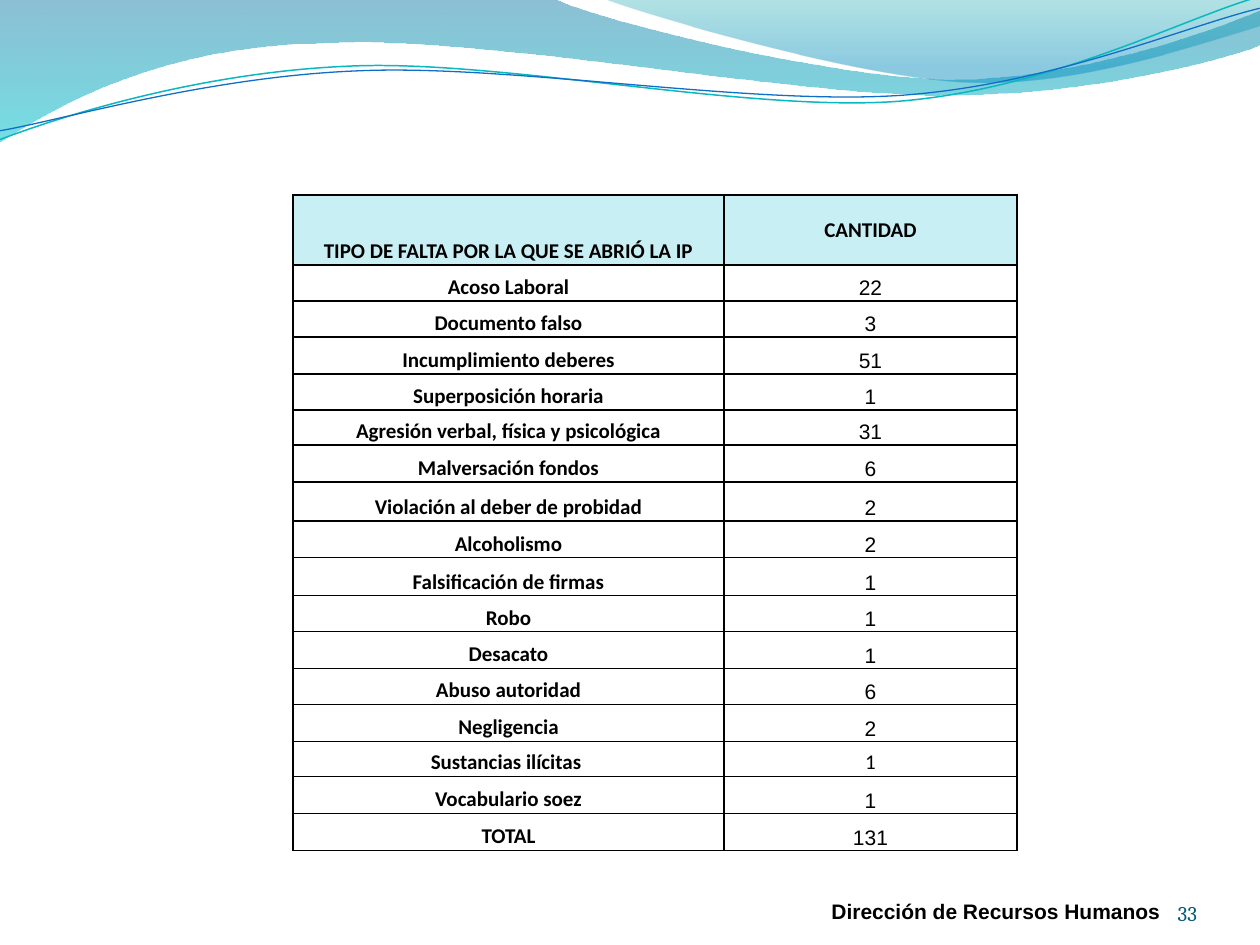
from lxml.etree import SubElement
from pptx import Presentation
from pptx.dml.color import RGBColor
from pptx.enum.text import MSO_ANCHOR, PP_ALIGN
from pptx.oxml.ns import qn
from pptx.util import Emu, Pt

SCALE = 914400 / 126
COLORS = {
    "ink": "000000", "head": "C8EFF4", "page": "045D75",
    "teal": "0AB8BF", "blue": "0F6FC6",
    "deep": "0074A1", "aqua": "00C6CF", "sea": "00A1A9", "sky": "008BBF",
}
FAULTS = [
    ("Acoso Laboral", 22), ("Documento falso", 3),
    ("Incumplimiento deberes", 51), ("Superposición horaria", 1),
    ("Agresión verbal, física y psicológica", 31), ("Malversación fondos", 6),
    ("Violación al deber de probidad", 2), ("Alcoholismo", 2),
    ("Falsificación de firmas", 1), ("Robo", 1), ("Desacato", 1),
    ("Abuso autoridad", 6), ("Negligencia", 2), ("Sustancias ilícitas ", 1),
    ("Vocabulario soez", 1), ("TOTAL", 131),
]
HEIGHTS = {0: 70, 1: 36, 2: 36, 4: 36, 5: 35, 7: 39, 9: 38, 10: 36, 12: 36,
           14: 35}
WAVES = [
    ([(0, 0), (554, -1), (600, 21, 837, 79, 955, 79),
      (1075, 79, 1207, 33, 1260, 11), (1261, 45),
      (1239, 55, 1096, 96, 940, 95), (784, 95, 481, 35, 324, 43),
      (163, 45, 58, 105, -1, 142), (0, 0)],
     [("deep", 0, 45), ("aqua", 1, 55)]),
    ([(604, -1), (641, 14, 859, 78, 969, 82),
      (1079, 87, 1211, 40, 1260, 26), (1260, 0), (604, -1)],
     [("sea", 0, 30), ("sky", 0.8, 45)]),
]
LINES = [
    ([(-3, 110), (58, 90, 199, 52, 350, 53), (499, 53, 745, 118, 896, 114),
      (1049, 109, 1184, 45, 1260, 27)], "teal", 0.85),
    ([(-2, 101), (57, 94, 207, 57, 357, 58), (509, 58, 750, 112, 902, 108),
      (1052, 104, 1188, 52, 1262, 38)], "blue", 0.75),
]


def px(size):
    """Turn px into EMU."""
    return Emu(round(size * SCALE))


def color(name):
    """Look up a colour by name."""
    return RGBColor.from_string(COLORS[name])


def add_path(slide, steps, close):
    """Draw a freeform whose six-number steps are cubic curves."""
    ends = [(px(step[-2]), px(step[-1])) for step in steps]
    pen = slide.shapes.build_freeform(*ends[0])
    pen.add_line_segments(ends[1:], close=close)
    shape = pen.convert_to_shape()
    shape.shadow.inherit = False
    tags = list(shape.element.spPr.iter(qn("a:lnTo")))
    for tag, step in zip(tags, steps[1:]):
        if len(step) == 6:
            curve = SubElement(tag.getparent(), qn("a:cubicBezTo"))
            for x, y in zip(step[::2], step[1::2]):
                SubElement(curve, qn("a:pt"), x=str(px(x) - shape.left),
                           y=str(px(y) - shape.top))
            tag.getparent().replace(tag, curve)
    return shape


def add_wave(slide, steps, stops):
    """Draw a closed wave with a see-through gradient from top to bottom."""
    shape = add_path(slide, steps, True)
    shape.line.fill.background()
    shape.fill.gradient()
    shape.fill.gradient_angle = 270
    for stop, (name, place, _) in zip(shape.fill.gradient_stops, stops):
        stop.color.rgb = color(name)
        stop.position = place
    tags = shape.element.spPr.iter(qn("a:srgbClr"))
    for tag, (_, _, alpha) in zip(list(tags), stops):
        SubElement(tag, qn("a:alpha"), val=str(alpha * 1000))


def add_line(slide, steps, name, width):
    """Draw an open curved line, slightly turned."""
    shape = add_path(slide, steps, False)
    shape.rotation = 357.3
    shape.fill.background()
    shape.line.color.rgb = color(name)
    shape.line.width = Pt(width)


def write(frame, text, align, face, bold=False, name="ink", gap=None):
    """Write one formatted paragraph into a text frame."""
    par = frame.paragraphs[0]
    par.alignment = align
    par.line_spacing = gap
    run = par.add_run()
    run.text = text
    for key, value in {"size": Pt(12), "name": face, "bold": bold}.items():
        setattr(run.font, key, value)
    run.font.color.rgb = color(name)


def add_text(slide, box, text, style, form):
    """Add a text box with the given frame format."""
    frame = slide.shapes.add_textbox(*map(px, box)).text_frame
    for key, value in {"word_wrap": True, **form}.items():
        setattr(frame, key, value)
    write(frame, text, **style)


def add_edges(cell):
    """Put a thin dark border on each side of a cell."""
    props = cell._tc.get_or_add_tcPr()
    for side in "LRTB":
        edge = SubElement(props, qn(f"a:ln{side}"), w=str(Pt(1)))
        fill = SubElement(edge, qn("a:solidFill"))
        SubElement(fill, qn("a:srgbClr"), val=COLORS["ink"])


def fill_cell(cell, text, face, bold, gap, head, anchor):
    """Format one table cell and write its text."""
    add_edges(cell)
    if head:
        cell.fill.solid()
        cell.fill.fore_color.rgb = color("head")
    else:
        cell.fill.background()
    for side in ("left", "right", "top", "bottom"):
        setattr(cell, f"margin_{side}", px(1))
    cell.vertical_anchor = anchor
    write(cell.text_frame, text, PP_ALIGN.CENTER, face, bold, gap=gap)


def add_faults(slide):
    """Add the table of faults and their counts."""
    rows = [("TIPO DE FALTA POR LA QUE SE ABRIÓ LA IP", "CANTIDAD"), *FAULTS]
    sizes = [HEIGHTS.get(i, 37) for i in range(len(rows))]
    box = map(px, (293, 195, 724, sum(sizes)))
    table = slide.shapes.add_table(len(rows), 2, *box).table
    table.first_row = table.horz_banding = False
    for col, width in zip(table.columns, (431, 293)):
        col.width = px(width)
    for i, (label, count) in enumerate(rows):
        table.rows[i].height = px(sizes[i])
        head = i == 0
        low, mid = MSO_ANCHOR.BOTTOM, MSO_ANCHOR.MIDDLE
        fill_cell(table.cell(i, 0), label, "Calibri", True, 1.05, head, low)
        plain = head or label.startswith("Sustancias")
        fill_cell(table.cell(i, 1), str(count), "Calibri" if plain else "Arial",
                  head, 1.05 if head else 1.07, head, mid if head else low)


def main():
    """Build the slide and save it."""
    deck = Presentation()
    deck.slide_width, deck.slide_height = px(1260), px(945)
    slide = deck.slides.add_slide(deck.slide_layouts[6])
    for wave in WAVES:
        add_wave(slide, *wave)
    for line in LINES:
        add_line(slide, *line)
    flat = {f"margin_{s}": 0 for s in ("left", "right", "top", "bottom")}
    add_text(slide, (1092, 876, 105, 50), "33",
             {"align": PP_ALIGN.RIGHT, "face": "Cambria", "name": "page"},
             {"vertical_anchor": MSO_ANCHOR.BOTTOM, **flat})
    add_faults(slide)
    add_text(slide, (819, 892, 357, 38), "Dirección de Recursos Humanos",
             {"align": PP_ALIGN.LEFT, "face": "Arial", "bold": True}, {})
    deck.save("out.pptx")


if __name__ == "__main__":
    main()
